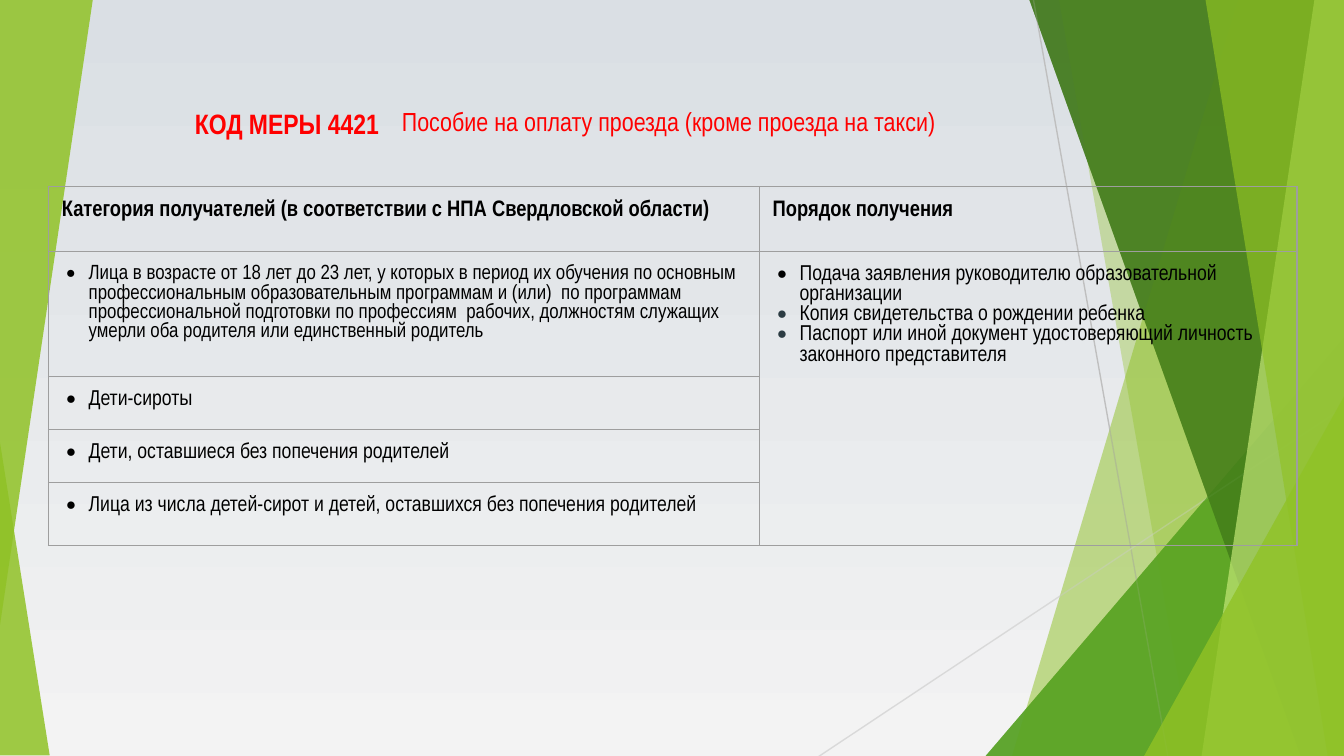
import pptx
import pptx.util
import pptx.dml.color
import pptx.enum.shapes
import pptx.enum.text
import pptx.oxml.ns
from dataclasses import dataclass
from lxml import etree

Inches, Pt = pptx.util.Inches, pptx.util.Pt
Shape = pptx.enum.shapes.MSO_SHAPE
Align = pptx.enum.text.PP_ALIGN
Anchor = pptx.enum.text.MSO_ANCHOR
qn = pptx.oxml.ns.qn


@dataclass(frozen=True)
class Theme:
    font: str = "Arial Narrow"
    sky: str = "DADFE4"
    mist: str = "F3F3F3"
    lime: str = "90C226"
    leaf: str = "54A021"
    moss: str = "3F7819"
    pale: str = "C0E474"
    red: str = "FF0000"
    ink: str = "000000"
    slate: str = "2C3C43"
    rule: str = "9E9E9E"
    title: float = 14
    code: float = 15
    head: float = 12
    dense: float = 11
    body: float = 11.5


T = Theme()

HEADS = ["Категория получателей (в соответствии с НПА Свердловской области)",
         "Порядок получения"]
GROUPS = [
    "Лица в возрасте от 18 лет до 23 лет, у которых в период их обучения по основным "
    "профессиональным образовательным программам и (или)  по программам "
    "профессиональной подготовки по профессиям  рабочих, должностям служащих "
    "умерли оба родителя или единственный родитель",
    "Дети-сироты",
    "Дети, оставшиеся без попечения родителей",
    "Лица из числа детей-сирот и детей, оставшихся без попечения родителей",
]
STEPS = [
    "Подача заявления руководителю образовательной организации",
    "Копия свидетельства о рождении ребенка",
    "Паспорт или иной документ удостоверяющий личность законного представителя",
]


def rgb(tint):
    return pptx.dml.color.RGBColor.from_string(tint)


def add(parent, tag, **attrs):
    return etree.SubElement(parent, qn(tag), attrs)


def paint(shape, tint, alpha):
    """Flat fill with the given opacity in percent, no outline or shadow."""
    shape.shadow.inherit = False
    shape.line.fill.background()
    shape.fill.solid()
    shape.fill.fore_color.rgb = rgb(tint)
    node = shape.fill._xPr.find(qn("a:solidFill"))[0]
    add(node, "a:alpha", val=str(alpha * 1000))


def style(para, size, tint, bold=False):
    for run in para.runs:
        run.font.name = T.font
        run.font.size = Pt(size)
        run.font.bold = bold
        run.font.color.rgb = rgb(tint)


def backdrop(slide):
    fill = slide.background.fill
    fill.gradient()
    fill.gradient_angle = 270
    for stop, tint in zip(fill.gradient_stops, (T.sky, T.mist)):
        stop.color.rgb = rgb(tint)


def wedge(slide, box, corner, tint, alpha, turn=0):
    """Right triangle whose tip is at the left (0) or right (1) end."""
    shape = slide.shapes.add_shape(Shape.ISOSCELES_TRIANGLE, *map(Inches, box))
    shape.adjustments[0] = corner
    shape.rotation = turn
    paint(shape, tint, alpha)


def shard(slide, box, top, foot, tint, alpha):
    """Band from a slanted left side to the right edge of the box."""
    left, head, width, height = box
    right, base = left + width, head + height
    build = slide.shapes.build_freeform(Inches(top), Inches(head))
    build.add_line_segments([(Inches(x), Inches(y)) for x, y in
                             ((right, head), (right, base), (foot, base))])
    paint(build.convert_to_shape(), tint, alpha)


def facets(slide, box):
    """Green glass facets; offsets are taken from the box."""
    left, head, width, height = box
    right, base = left + width, head + height

    def band(top, foot, tint, alpha):
        shard(slide, box, left + top, left + foot, tint, alpha)

    def peak(wide, tall, tint, alpha):
        wedge(slide, (right - wide, base - tall, wide, tall), 1, tint, alpha)

    band(1.88, 0.2, T.lime, 30)
    band(0.55, 1.54, T.lime, 20)
    peak(2.67, 3.12, T.leaf, 72)
    band(0.33, 2.35, T.moss, 70)
    band(2.45, 1.61, T.pale, 70)
    band(1.64, 2.55, T.lime, 65)
    peak(1.49, 2.68, T.lime, 80)


def rays(slide, box):
    """Two thin lines crossing the facets."""
    left, head, width, height = box
    right, base = left + width, head + height
    for start, end, tint in (((left + 0.36, head), (left + 1.36, base), "BFBFBF"),
                             ((right, base - 2.6), (left - 1.24, base), "D9D9D9")):
        line = slide.shapes.add_connector(
            pptx.enum.shapes.MSO_CONNECTOR.STRAIGHT, *map(Inches, start + end))
        line.line.color.rgb = rgb(tint)
        line.line.width = Pt(0.75)
        add(line._element.spPr, "a:effectLst")


def label(slide, box, text, size, pad, bold=False, align=Align.LEFT, gap=1.0):
    frame = slide.shapes.add_textbox(*map(Inches, box)).text_frame
    frame.word_wrap = True
    frame.vertical_anchor = Anchor.MIDDLE
    frame.margin_left = frame.margin_right = Inches(pad[0])
    frame.margin_top = frame.margin_bottom = Inches(pad[1])
    frame.text = text
    para = frame.paragraphs[0]
    para.alignment = align
    para.line_spacing = gap
    style(para, size, T.red, bold)


def header(slide, box):
    left, top, width, height = box
    split = 2.1
    label(slide, (left, top, split, height), "КОД МЕРЫ 4421", T.code,
          (0.1, 0.1), bold=True, align=Align.RIGHT)
    label(slide, (left + split, top, width - split, height),
          "Пособие на оплату проезда (кроме проезда на такси)", T.title,
          (0.07, 0.04), gap=0.9)


def bullet(para, tint):
    props = para._p.get_or_add_pPr()
    props.set("marL", str(Inches(0.2)))
    props.set("indent", str(Inches(-0.17)))
    add(add(props, "a:buClr"), "a:srgbClr", val=tint)
    add(props, "a:buSzPct", val="80000")
    add(props, "a:buFont", typeface=T.font)
    add(props, "a:buChar", char="●")


def frame_cell(cell):
    """Clear cell with even margins and thin borders."""
    cell.margin_left = cell.margin_right = Inches(0.1)
    cell.margin_top = cell.margin_bottom = Inches(0.1)
    cell.fill.background()
    props = cell._tc.get_or_add_tcPr()
    for at, side in enumerate("LRTB"):
        edge = etree.Element(qn("a:ln" + side), w=str(Pt(0.75)))
        add(add(edge, "a:solidFill"), "a:srgbClr", val=T.rule)
        props.insert(at, edge)


def fill_list(cell, lines, size, tints):
    cell.text_frame.text = "\n".join(lines)
    for para, tint in zip(cell.text_frame.paragraphs, tints):
        style(para, size, T.ink)
        bullet(para, tint)


def grid(slide, box):
    cols, rows = (5.29, 4), (0.48, 0.89, 0.31, 0.31, 0.47)
    frame = slide.shapes.add_table(len(rows), len(cols), *map(Inches, box))
    table = frame.table
    table.first_row = table.horz_banding = False
    for col, width in zip(table.columns, cols):
        col.width = Inches(width)
    for row, height in zip(table.rows, rows):
        row.height = Inches(height)
    frame.height = Inches(box[3])
    for cell in table.iter_cells():
        frame_cell(cell)
        # Keeps empty merged cells from stretching their rows
        add(cell.text_frame.paragraphs[0]._p, "a:endParaRPr", sz="800")
    for at, text in enumerate(HEADS):
        cell = table.cell(0, at)
        cell.text_frame.text = text
        style(cell.text_frame.paragraphs[0], T.head, T.ink, True)
    for at, text in enumerate(GROUPS, 1):
        fill_list(table.cell(at, 0), [text], T.dense if at == 1 else T.body, [T.ink])
    table.cell(1, 1).merge(table.cell(len(GROUPS), 1))
    fill_list(table.cell(1, 1), STEPS, T.body, [T.ink, T.slate, T.slate])


def main():
    deck = pptx.Presentation()
    deck.slide_width = Inches(10)
    deck.slide_height = deck.slide_width * 9 // 16
    slide = deck.slides.add_slide(deck.slide_layouts[6])
    side = (7.33, 0, 2.67, 5.63)
    # Backdrop: two layers of facets, with rays between them
    backdrop(slide)
    facets(slide, side)
    wedge(slide, (0, 3.29, 0.37, 2.33), 0, T.lime, 85)
    rays(slide, side)
    facets(slide, side)
    wedge(slide, (0, 0, 0.69, 4.65), 1, T.lime, 85, turn=180)
    # Content
    header(slide, (0.82, 0.53, 8.4, 0.77))
    grid(slide, (0.36, 1.39, 9.29, 2.67))
    deck.save("out.pptx")


if __name__ == "__main__":
    main()
